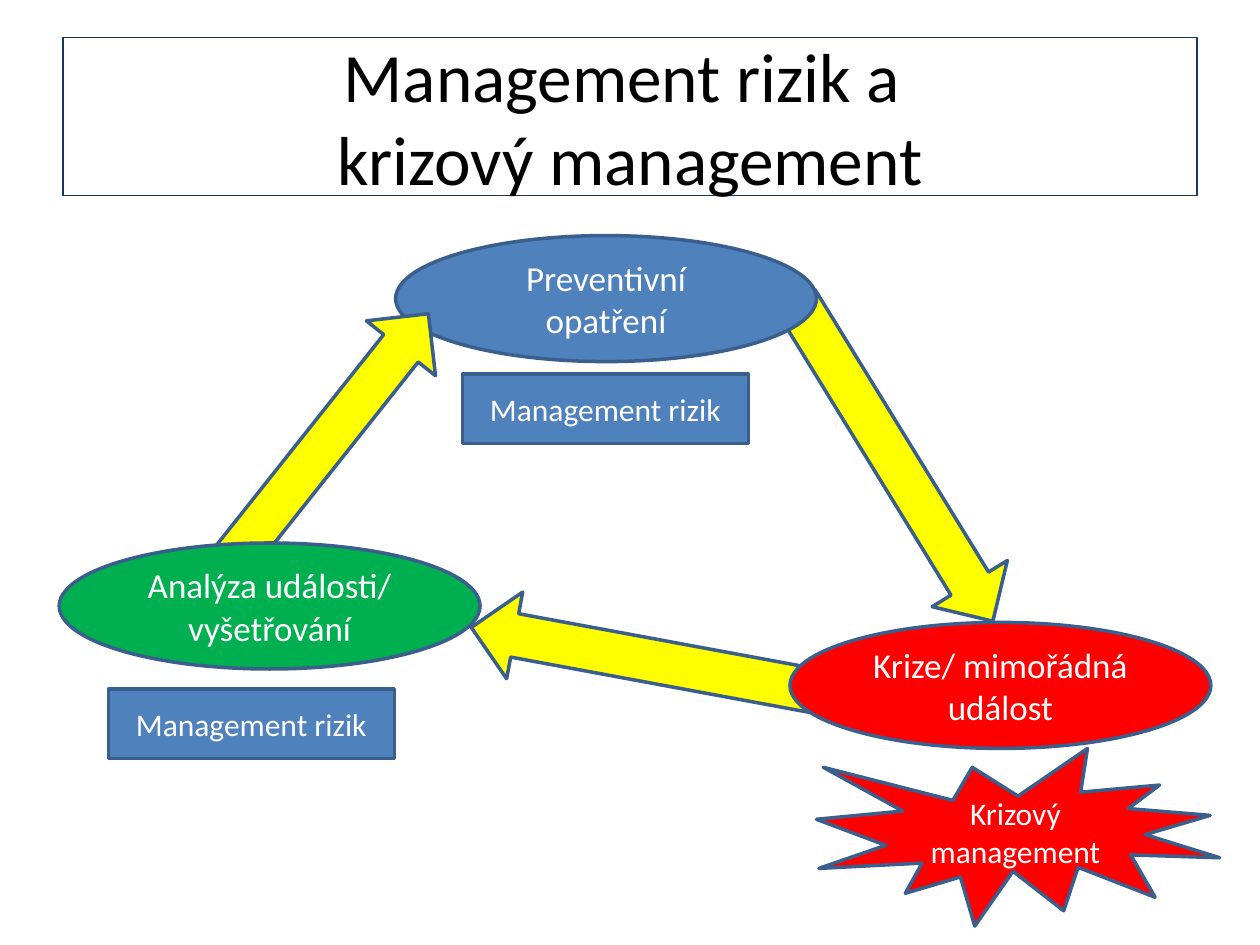
import math

import pptx
import pptx.dml.color
import pptx.enum.shapes
import pptx.enum.text
import pptx.util

RGBColor = pptx.dml.color.RGBColor
SHAPE = pptx.enum.shapes.MSO_SHAPE
MIDDLE = pptx.enum.text.MSO_ANCHOR.MIDDLE
CENTER = pptx.enum.text.PP_ALIGN.CENTER

BLACK = RGBColor(0x00, 0x00, 0x00)
WHITE = RGBColor(0xFF, 0xFF, 0xFF)
NAVY = RGBColor(0x17, 0x37, 0x5E)
OUTLINE = RGBColor(0x3A, 0x5F, 0x8C)
BLUE = RGBColor(0x4F, 0x81, 0xBD)
RED = RGBColor(0xFF, 0x00, 0x00)
GREEN = RGBColor(0x00, 0xB0, 0x50)
YELLOW = RGBColor(0xFF, 0xFF, 0x00)

SLIDE_WIDTH = pptx.util.Inches(10)
SLIDE_HEIGHT = pptx.util.Inches(7.5)
CELL = SLIDE_WIDTH / 100
STAGE_SIZE = (33.4, 10)
LABEL_SIZE = (22.7, 5.5)
BURST_SIZE = (32, 14.1)
ARROW_WIDTH = 7


def place(shape, box):
    for name, cells in zip(("left", "top", "width", "height"), box):
        setattr(shape, name, round(cells * CELL))


def outline(shape, color, width):
    shape.line.color.rgb = color
    shape.line.width = pptx.util.Pt(width)


def write(shape, text, size, color):
    frame = shape.text_frame
    frame.text = text
    for name, value in {"word_wrap": True, "vertical_anchor": MIDDLE}.items():
        setattr(frame, name, value)
    font_format = {"name": "Calibri", "size": pptx.util.Pt(size), "bold": False}
    for para in frame.paragraphs:
        para.alignment = CENTER
        for span in para.runs:
            for name, value in font_format.items():
                setattr(span.font, name, value)
            span.font.color.rgb = color


def draw_title(page, box, text):
    title = page.shapes.title
    place(title, box)
    outline(title, NAVY, 0.75)
    write(title, text, 39.6, BLACK)


def draw_shape(page, kind, box, fill):
    shape = page.shapes.add_shape(kind, 0, 0, 0, 0)
    place(shape, box)
    shape.shadow.inherit = False
    shape.fill.solid()
    shape.fill.fore_color.rgb = fill
    outline(shape, OUTLINE, 2)
    return shape


def draw_text_shape(page, kind, box, fill, text, size):
    write(draw_shape(page, kind, box, fill), text, size, WHITE)


def draw_arrow(page, tail, tip):
    across, down = tip[0] - tail[0], tip[1] - tail[1]
    length = math.hypot(across, down)
    left = (tail[0] + tip[0] - ARROW_WIDTH) / 2
    top = (tail[1] + tip[1] - length) / 2
    box = (left, top, ARROW_WIDTH, length)
    arrow = draw_shape(page, SHAPE.DOWN_ARROW, box, YELLOW)
    arrow.rotation = math.degrees(math.atan2(-across, down)) % 360


def draw_cycle(page):
    stages = [
        ((63.2, 23.9), (78.8, 49.3), (31.4, 18.7), BLUE, "Preventivní opatření"),
        ((65, 54.9), (37.4, 49.8), (62.7, 49.4), RED, "Krize/ mimořádná událost"),
        ((17.8, 45.3), (34, 24.9), (4.7, 43.1), GREEN, "Analýza události/ vyšetřování"),
    ]
    for tail, tip, corner, fill, text in stages:
        draw_arrow(page, tail, tip)
        draw_text_shape(page, SHAPE.OVAL, corner + STAGE_SIZE, fill, text, 20)


def draw_labels(page):
    for corner in ((36.7, 29.7), (8.6, 54.7)):
        draw_text_shape(page, SHAPE.RECTANGLE, corner + LABEL_SIZE, BLUE, "Management rizik", 18)
    draw_text_shape(page, SHAPE.EXPLOSION1, (64.8, 59.4) + BURST_SIZE, RED, "Krizový management", 18)


def main():
    deck = pptx.Presentation()
    deck.slide_width = SLIDE_WIDTH
    deck.slide_height = SLIDE_HEIGHT
    page = deck.slides.add_slide(deck.slide_layouts[5])
    draw_title(page, (5, 3, 90, 12.5), "Management rizik a \vkrizový management")
    draw_cycle(page)
    draw_labels(page)
    deck.save("out.pptx")


if __name__ == "__main__":
    main()
